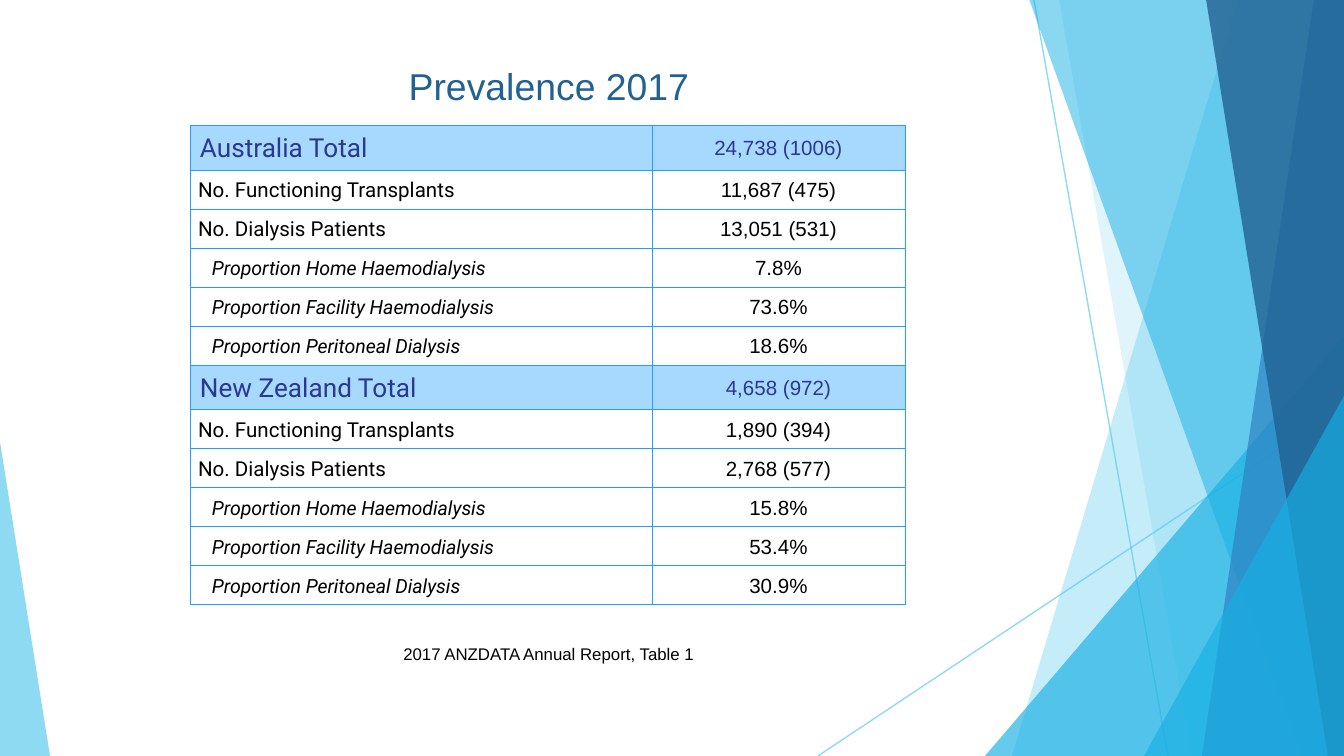
from lxml.etree import SubElement
from pptx import Presentation
from pptx.dml.color import RGBColor
from pptx.enum.shapes import MSO_CONNECTOR, MSO_SHAPE
from pptx.enum.text import MSO_ANCHOR, MSO_AUTO_SIZE, PP_ALIGN
from pptx.oxml.ns import qn
from pptx.util import Emu, Pt

SCALE = 914400 / 134.4  # EMU per px
WIDTH, HEIGHT = 1344, 756

COLOURS = {
    "sky": "5FCBEF", "cyan": "17B0E4", "blue": "2E83C3", "navy": "226292",
    "border": "239EFF", "total_fill": "A7D9FF", "total_text": "2A388F", "black": "000000",
}

# Row height, left margin and fonts for each kind of table row
ROW_KINDS = {
    "total": {"height": 45, "indent": 10, "colour": "total_text",
              "label": {"name": "Roboto", "size": Pt(14)}},
    "count": {"height": 39, "indent": 8, "colour": "black",
              "label": {"name": "Roboto", "size": Pt(11)}},
    "share": {"height": 39, "indent": 22, "colour": "black",
              "label": {"name": "Roboto", "size": Pt(10.5), "italic": True}},
}
VALUE_FONT = {"name": "Arial", "size": Pt(11)}

MEASURES = [
    ("count", "No. Functioning Transplants"),
    ("count", "No. Dialysis Patients"),
    ("share", "Proportion Home Haemodialysis"),
    ("share", "Proportion Facility Haemodialysis"),
    ("share", "Proportion Peritoneal Dialysis"),
]
COUNTRIES = {
    "Australia Total": ["24,738 (1006)", "11,687 (475)", "13,051 (531)", "7.8%", "73.6%", "18.6%"],
    "New Zealand Total": ["4,658 (972)", "1,890 (394)", "2,768 (577)", "15.8%", "53.4%", "30.9%"],
}


def px(length):
    return Emu(round(length * SCALE))


def rgb(name):
    return RGBColor.from_string(COLOURS[name])


def set_attributes(target, values):
    for name, value in values.items():
        setattr(target, name, value)


def format_text(paragraph, text, colour, font, **layout):
    paragraph.text = text
    set_attributes(paragraph, layout)
    set_attributes(paragraph.runs[0].font, font)
    paragraph.runs[0].font.color.rgb = rgb(colour)


def set_opacity(fill_parent, percent):
    colour = fill_parent.find(".//" + qn("a:srgbClr"))
    SubElement(colour, qn("a:alpha"), val=str(percent * 1000))


def paint_facet(shape, colour, opacity):
    shape.shadow.inherit = False
    shape.fill.solid()
    shape.fill.fore_color.rgb = rgb(colour)
    set_opacity(shape._element.spPr, opacity)
    shape.line.fill.background()


def add_ray(slide, start, end):
    ray = slide.shapes.add_connector(MSO_CONNECTOR.STRAIGHT, *map(px, start + end))
    ray.line.color.rgb = rgb("sky")
    ray.line.width = Pt(0.75)
    set_opacity(ray._element.spPr, 70)
    SubElement(ray._element.spPr, qn("a:effectLst"))


def add_band(slide, top_left, bottom_left, colour, opacity):
    """A facet with a slanted left side that reaches the right slide edge."""
    outline = slide.shapes.build_freeform(top_left, -1, scale=SCALE)
    outline.add_line_segments([(WIDTH, -1), (WIDTH, HEIGHT), (bottom_left, HEIGHT)])
    paint_facet(outline.convert_to_shape(), colour, opacity)


def add_corner(slide, left, top, width, apex, colour, opacity):
    """A triangle that stands on the bottom slide edge."""
    corner = slide.shapes.add_shape(
        MSO_SHAPE.ISOSCELES_TRIANGLE, *map(px, (left, top, width, HEIGHT - top)))
    corner.adjustments[0] = apex
    paint_facet(corner, colour, opacity)


def add_decoration(slide):
    add_ray(slide, (1034, 0), (1168, HEIGHT))
    add_ray(slide, (WIDTH, 406), (818, HEIGHT))
    add_band(slide, 1238, 1012, "sky", 36)
    add_band(slide, 1059, 1192, "sky", 20)
    add_corner(slide, 985, 336, 359, 1, "cyan", 66)
    add_band(slide, 1029, 1301, "cyan", 50)
    add_band(slide, 1314, 1202, "blue", 70)
    add_band(slide, 1206, 1328, "navy", 80)
    add_corner(slide, 1144, 396, 200, 1, "cyan", 66)
    add_corner(slide, 0, 442, 50, 0, "sky", 70)


def add_title(slide):
    title = slide.shapes.title
    set_attributes(title, {"left": px(75), "top": px(56), "width": px(948), "height": px(126)})
    frame = title.text_frame
    frame.vertical_anchor = MSO_ANCHOR.TOP
    frame.auto_size = MSO_AUTO_SIZE.NONE
    format_text(frame.paragraphs[0], "Prevalence 2017", "navy",
                {"name": "Arial", "size": Pt(20)}, alignment=PP_ALIGN.CENTER)


def format_cell(cell, kind, left_margin):
    set_attributes(cell, {
        "vertical_anchor": MSO_ANCHOR.MIDDLE, "margin_left": px(left_margin),
        "margin_right": px(3), "margin_top": px(3), "margin_bottom": px(3),
    })
    # Borders come before the fill in the cell properties
    properties = cell._tc.get_or_add_tcPr()
    for side in ("lnL", "lnR", "lnT", "lnB"):
        border = SubElement(properties, qn("a:" + side), w=str(Pt(0.5)))
        paint = SubElement(border, qn("a:solidFill"))
        SubElement(paint, qn("a:srgbClr"), val=COLOURS["border"])
    if kind == "total":
        cell.fill.solid()
        cell.fill.fore_color.rgb = rgb("total_fill")
    else:
        cell.fill.background()


def add_prevalence_table(slide):
    records = [
        (kind, label, value)
        for country, values in COUNTRIES.items()
        for (kind, label), value in zip([("total", country)] + MEASURES, values)
    ]
    heights = [ROW_KINDS[kind]["height"] for kind, _, _ in records]
    table = slide.shapes.add_table(
        len(records), 2, px(190), px(125), px(715), px(sum(heights))).table
    set_attributes(table, {"first_row": False, "horz_banding": False})
    for column, width in zip(table.columns, (462, 253)):
        column.width = px(width)

    for row, height, (kind, label, value) in zip(table.rows, heights, records):
        row.height = px(height)
        style = ROW_KINDS[kind]
        label_cell, value_cell = row.cells
        format_cell(label_cell, kind, style["indent"])
        format_cell(value_cell, kind, 3)
        format_text(label_cell.text_frame.paragraphs[0], label, style["colour"],
                    style["label"], line_spacing=1.1)
        format_text(value_cell.text_frame.paragraphs[0], value, style["colour"], VALUE_FONT,
                    alignment=PP_ALIGN.CENTER, line_spacing=1.1, space_after=Pt(14))


def add_citation(slide):
    frame = slide.shapes.add_textbox(px(297), px(637), px(503), px(34)).text_frame
    set_attributes(frame, {"word_wrap": True, "auto_size": MSO_AUTO_SIZE.SHAPE_TO_FIT_TEXT})
    format_text(frame.paragraphs[0], "2017 ANZDATA Annual Report, Table 1", "black",
                {"name": "Arial", "size": Pt(9)}, alignment=PP_ALIGN.CENTER)


def main():
    presentation = Presentation()
    presentation.slide_width, presentation.slide_height = px(WIDTH), px(HEIGHT)
    slide = presentation.slides.add_slide(presentation.slide_layouts[5])
    add_decoration(slide)
    add_title(slide)
    add_prevalence_table(slide)
    add_citation(slide)
    presentation.save("out.pptx")


if __name__ == "__main__":
    main()
